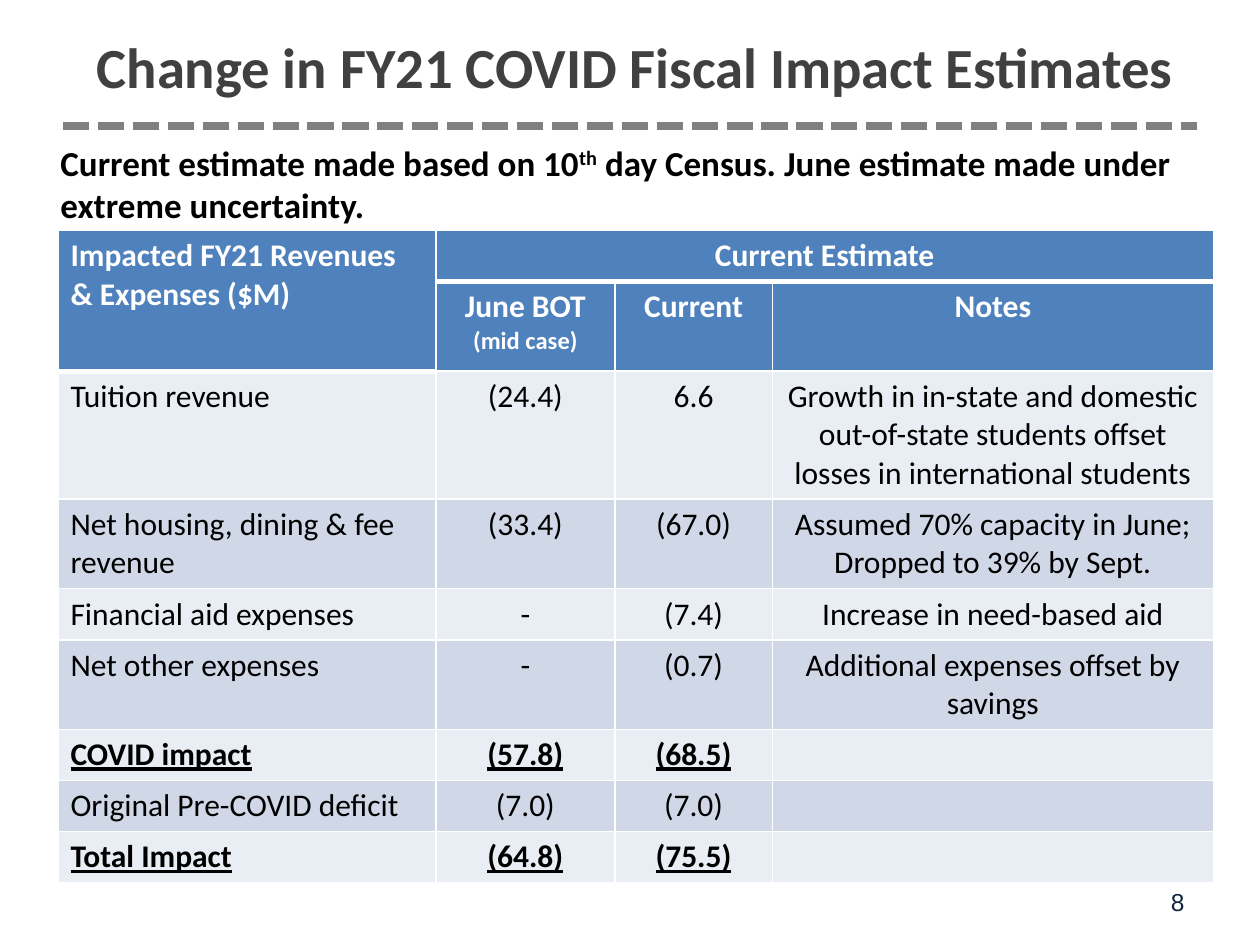
from dataclasses import dataclass

from lxml import etree
from pptx import Presentation
from pptx.dml.color import RGBColor
from pptx.enum.dml import MSO_LINE
from pptx.enum.shapes import MSO_CONNECTOR
from pptx.enum.text import MSO_ANCHOR, MSO_AUTO_SIZE, PP_ALIGN
from pptx.oxml.ns import qn
from pptx.util import Inches, Pt

LEFT, CENTER, RIGHT = PP_ALIGN.LEFT, PP_ALIGN.CENTER, PP_ALIGN.RIGHT
TOP, MIDDLE = MSO_ANCHOR.TOP, MSO_ANCHOR.MIDDLE
STRAIGHT, SQUARE_DOT = MSO_CONNECTOR.STRAIGHT, MSO_LINE.SQUARE_DOT
NO_AUTOFIT = MSO_AUTO_SIZE.NONE


@dataclass(frozen=True)
class Theme:
    """Colours, fonts and type sizes of the slide."""
    font: str = "Calibri"
    number_font: str = "Arial"
    heading: str = "404040"
    text: str = "000000"
    white: str = "FFFFFF"
    number: str = "0F243E"
    rule: str = "808080"
    header_fill: str = "4F81BD"
    bands: tuple = ("E9EDF4", "D0D8E8")
    title_size: float = 32.4
    lead_size: float = 20
    table_size: float = 18
    small_size: float = 14


THEME = Theme()
COLUMN_WIDTHS = (3, 1.42, 1.25, 3.5)
ROW_HEIGHTS = (0.38, 0.61, 0.96, 0.67, 0.38, 0.67, 0.38, 0.38, 0.38)
HEADER_ROWS = 2
ESTIMATES = (
    ("Tuition revenue", "(24.4)", "6.6",
     "Growth in in-state and domestic out-of-state students offset losses in international students"),
    ("Net housing, dining & fee revenue", "(33.4)", "(67.0)",
     "Assumed 70% capacity in June; Dropped to 39% by Sept."),
    ("Financial aid expenses", "-", "(7.4)", "Increase in need-based aid"),
    ("Net other expenses", "-", "(0.7)", "Additional expenses offset by savings"),
    ("COVID impact", "(57.8)", "(68.5)", ""),
    ("Original Pre-COVID deficit", "(7.0)", "(7.0)", ""),
    ("Total Impact", "(64.8)", "(75.5)", ""),
)
TOTALS = ("COVID impact", "Total Impact")


def add_text(paragraph, text, *, size, color=THEME.text, font=THEME.font, bold=False,
             underline=False, baseline=None, align=LEFT):
    """Append a formatted run to a paragraph."""
    paragraph.alignment = align
    run = paragraph.add_run()
    run.text = text
    run.font.name = font
    run.font.size = Pt(size)
    run.font.bold = bold
    run.font.underline = underline
    run.font.color.rgb = RGBColor.from_string(color)
    if baseline:
        run._r.get_or_add_rPr().set("baseline", str(baseline))


def place(shape, left, top, width, height, anchor=TOP):
    """Position a text shape and return its first paragraph."""
    shape.left, shape.top = Inches(left), Inches(top)
    shape.width, shape.height = Inches(width), Inches(height)
    frame = shape.text_frame
    frame.word_wrap = True
    frame.auto_size = NO_AUTOFIT
    frame.vertical_anchor = anchor
    return frame.paragraphs[0]


def add_title(slide):
    """Fill the title placeholder."""
    heading = place(slide.shapes.title, 0.54, 0.11, 9, 0.83, MIDDLE)
    add_text(heading, "Change in FY21 COVID Fiscal Impact Estimates", size=THEME.title_size,
             color=THEME.heading, bold=True, align=CENTER)


def add_lead(slide):
    """Fill the body placeholder with the unbulleted lead sentence."""
    lead = place(slide.placeholders[1], 0.38, 1.07, 9.25, 0.83)
    properties = lead._p.get_or_add_pPr()
    properties.set("marL", "0")
    properties.set("indent", "0")
    etree.SubElement(properties, qn("a:buNone"))
    lead.space_before = Pt(0)
    for text, baseline in (("Current estimate made based on 10", None), ("th", 30000),
                           (" day Census. June estimate made under extreme uncertainty.", None)):
        add_text(lead, text, size=THEME.lead_size, bold=True, baseline=baseline)


def add_dotted_rule(slide, left, right, y):
    """Draw a thick dotted horizontal rule."""
    rule = slide.shapes.add_connector(STRAIGHT, Inches(left), Inches(y), Inches(right), Inches(y))
    rule.line.color.rgb = RGBColor.from_string(THEME.rule)
    rule.line.width = Pt(5)
    rule.line.dash_style = SQUARE_DOT
    etree.SubElement(rule._element.spPr, qn("a:effectLst"))


def style_cell(cell, fill, bottom=1):
    """Give a cell white borders and a solid fill."""
    properties = cell._tc.get_or_add_tcPr()
    for side, width in (("L", 1), ("R", 1), ("T", 1), ("B", bottom)):
        border = etree.SubElement(properties, qn(f"a:ln{side}"), w=str(Pt(width)))
        paint = etree.SubElement(border, qn("a:solidFill"))
        etree.SubElement(paint, qn("a:srgbClr"), val=THEME.white)
    cell.fill.solid()
    cell.fill.fore_color.rgb = RGBColor.from_string(fill)


def fill_header(table):
    """Fill the two header rows and merge their spanning cells."""
    for row in range(HEADER_ROWS):
        for column in range(len(COLUMN_WIDTHS)):
            thick = row == 0 or column == 0
            style_cell(table.cell(row, column), THEME.header_fill, bottom=3 if thick else 1)
    table.cell(0, 0).merge(table.cell(1, 0))
    table.cell(0, 1).merge(table.cell(0, 3))
    for row, column, text, align in ((0, 0, "Impacted FY21 Revenues & Expenses ($M)", LEFT),
                                     (0, 1, "Current Estimate", CENTER),
                                     (1, 1, "June BOT ", CENTER),
                                     (1, 2, "Current", CENTER),
                                     (1, 3, "Notes", CENTER)):
        add_text(table.cell(row, column).text_frame.paragraphs[0], text,
                 size=THEME.table_size, color=THEME.white, bold=True, align=align)
    add_text(table.cell(1, 1).text_frame.paragraphs[0], "(mid case)",
             size=THEME.small_size, color=THEME.white, bold=True, align=CENTER)


def fill_estimates(table):
    """Fill the banded rows, stressing the totals."""
    for index, estimate in enumerate(ESTIMATES):
        total = estimate[0] in TOTALS
        for column, text in enumerate(estimate):
            cell = table.cell(index + HEADER_ROWS, column)
            style_cell(cell, THEME.bands[index % 2])
            if text:
                add_text(cell.text_frame.paragraphs[0], text, size=THEME.table_size, bold=total,
                         underline=total, align=CENTER if column else LEFT)


def add_estimate_table(slide):
    """Add the table of fiscal impact estimates."""
    table = slide.shapes.add_table(len(ROW_HEIGHTS), len(COLUMN_WIDTHS), Inches(0.46), Inches(1.83),
                                   Inches(sum(COLUMN_WIDTHS)), Inches(sum(ROW_HEIGHTS))).table
    for column, width in zip(table.columns, COLUMN_WIDTHS):
        column.width = Inches(width)
    for row, height in zip(table.rows, ROW_HEIGHTS):
        row.height = Inches(height)
    fill_header(table)
    fill_estimates(table)


def add_page_number(slide):
    """Add the page number at the lower right."""
    area = (7.33, 6.99, 2.17, 0.4)
    box = slide.shapes.add_textbox(*map(Inches, area))
    add_text(place(box, *area), "8", size=THEME.small_size, color=THEME.number,
             font=THEME.number_font, align=RIGHT)


def main():
    """Build and save the slide."""
    deck = Presentation()
    deck.slide_width, deck.slide_height = Inches(10), Inches(7.5)
    slide = deck.slides.add_slide(deck.slide_layouts[1])
    add_dotted_rule(slide, 0.5, 9.5, 1)
    add_title(slide)
    add_page_number(slide)
    add_lead(slide)
    add_estimate_table(slide)
    deck.save("out.pptx")


if __name__ == "__main__":
    main()
